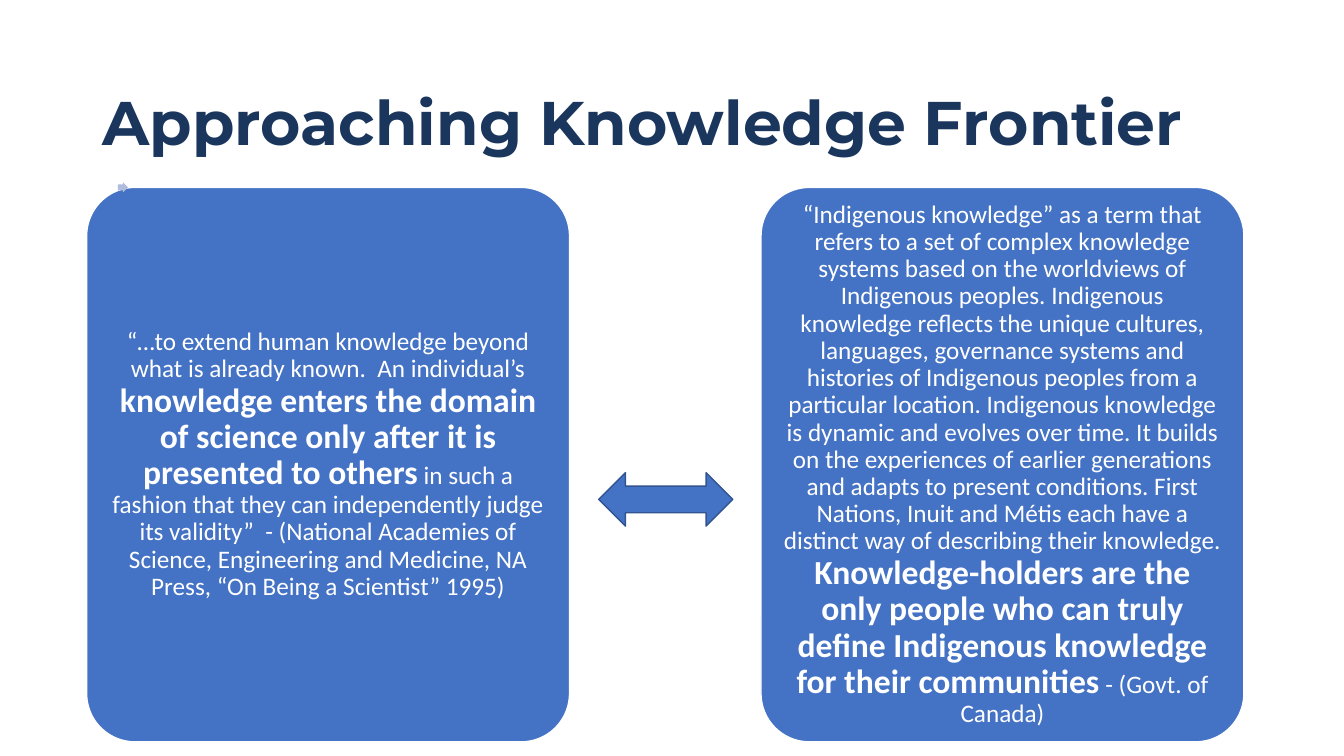
"""Builds the slide that sets two views of knowledge side by side."""
from dataclasses import dataclass

from pptx import Presentation
from pptx import util as u
from pptx.dml.color import RGBColor
from pptx.enum import shapes, text


@dataclass(frozen=True)
class Theme:
    navy: str = "1B365D"
    blue: str = "4472C4"
    edge: str = "325491"
    pale: str = "B0BCDE"
    white: str = "FFFFFF"
    heading_font: str = "Montserrat"
    body_font: str = "Calibri"
    title_size: int = 44
    strong_size: int = 24
    body_size: int = 18


@dataclass(frozen=True)
class Box:
    left: float
    top: float
    width: float
    height: float

    def lengths(self) -> list:
        return [u.Inches(n) for n in (self.left, self.top, self.width, self.height)]


@dataclass(frozen=True)
class Span:
    words: str
    strong: bool = False


@dataclass(frozen=True)
class Card:
    left: float
    spans: tuple[Span, ...]


THEME = Theme()
CARD_TOP, CARD_WIDTH, CARD_HEIGHT = 1.86, 4.79, 5.5
CARDS = (
    Card(0.86, (
        Span("“…to extend human knowledge beyond what is already known.  An individual’s "),
        Span("knowledge enters the domain of science only after it is presented to others", True),
        Span(" in such a fashion that they can independently judge its validity”  - "
             "(National Academies of Science, Engineering and Medicine, NA Press, "
             "“On Being a Scientist” 1995)"),
    )),
    Card(7.55, (
        Span("“Indigenous knowledge” as a term that refers to a set of complex knowledge "
             "systems based on the worldviews of Indigenous peoples. Indigenous knowledge "
             "reflects the unique cultures, languages, governance systems and histories of "
             "Indigenous peoples from a particular location. Indigenous knowledge is dynamic "
             "and evolves over time. It builds on the experiences of earlier generations and "
             "adapts to present conditions. First Nations, Inuit and Métis each have a "
             "distinct way of describing their knowledge. "),
        Span("Knowledge-holders are the only people who can truly define Indigenous "
             "knowledge for their communities", True),
        Span(" - (Govt. of Canada)"),
    )),
)


def add_span(para, words: str, *, size: int, color: str,
             font: str = THEME.body_font, bold: bool = False) -> None:
    """Append one formatted stretch of text to a paragraph."""
    span = para.add_run()
    span.text = words
    span.font.name, span.font.size, span.font.bold = font, u.Pt(size), bold
    span.font.color.rgb = RGBColor.from_string(color)


def first_para(shape, align, inset: float | None = None):
    """Prepare a shape for wrapped, vertically centred text."""
    frame = shape.text_frame
    frame.word_wrap = True
    frame.vertical_anchor = text.MSO_ANCHOR.MIDDLE
    if inset is not None:
        frame.margin_left = frame.margin_right = u.Inches(inset)
        frame.margin_top = frame.margin_bottom = u.Inches(inset)
    para = frame.paragraphs[0]
    para.alignment, para.line_spacing = align, 0.9
    return para


def add_figure(page, kind, box: Box, fill: str, line: str | None = None,
               adjust: tuple[float, ...] = ()):
    """Draw a preset shape with a flat fill and an optional outline."""
    figure = page.shapes.add_shape(kind, *box.lengths())
    figure.shadow.inherit = False
    for index, value in enumerate(adjust):
        figure.adjustments[index] = value
    figure.fill.solid()
    figure.fill.fore_color.rgb = RGBColor.from_string(fill)
    if line:
        figure.line.color.rgb = RGBColor.from_string(line)
        figure.line.width = u.Pt(1)
    else:
        figure.line.fill.background()
    return figure


def add_title(page, words: str) -> None:
    """Write the slide heading."""
    box = page.shapes.add_textbox(*Box(0.92, 0.7, 11.5, 1.1).lengths())
    para = first_para(box, text.PP_ALIGN.LEFT)
    add_span(para, words, size=THEME.title_size, color=THEME.navy,
             font=THEME.heading_font, bold=True)


def add_card(page, card: Card) -> None:
    """Draw a rounded card holding its quotation."""
    box = Box(card.left, CARD_TOP, CARD_WIDTH, CARD_HEIGHT)
    figure = add_figure(page, shapes.MSO_SHAPE.ROUNDED_RECTANGLE, box,
                        THEME.blue, THEME.white, (0.1,))
    para = first_para(figure, text.PP_ALIGN.CENTER, 0.08)
    for span in card.spans:
        size = THEME.strong_size if span.strong else THEME.body_size
        add_span(para, span.words, size=size, color=THEME.white, bold=span.strong)


def main() -> None:
    """Build and save the deck."""
    deck = Presentation()
    deck.slide_width, deck.slide_height = u.Inches(40 / 3), u.Inches(7.5)
    page = deck.slides.add_slide(deck.slide_layouts[6])
    add_title(page, "Approaching Knowledge Frontier")
    for card in CARDS:
        add_card(page, card)
    add_figure(page, shapes.MSO_SHAPE.RIGHT_ARROW, Box(1.17, 1.81, 0.1, 0.1),
               THEME.pale, adjust=(0.6, 0.5))
    add_figure(page, shapes.MSO_SHAPE.LEFT_RIGHT_ARROW, Box(5.94, 4.69, 1.33, 0.53),
               THEME.blue, THEME.edge)
    deck.save("out.pptx")


if __name__ == "__main__":
    main()
